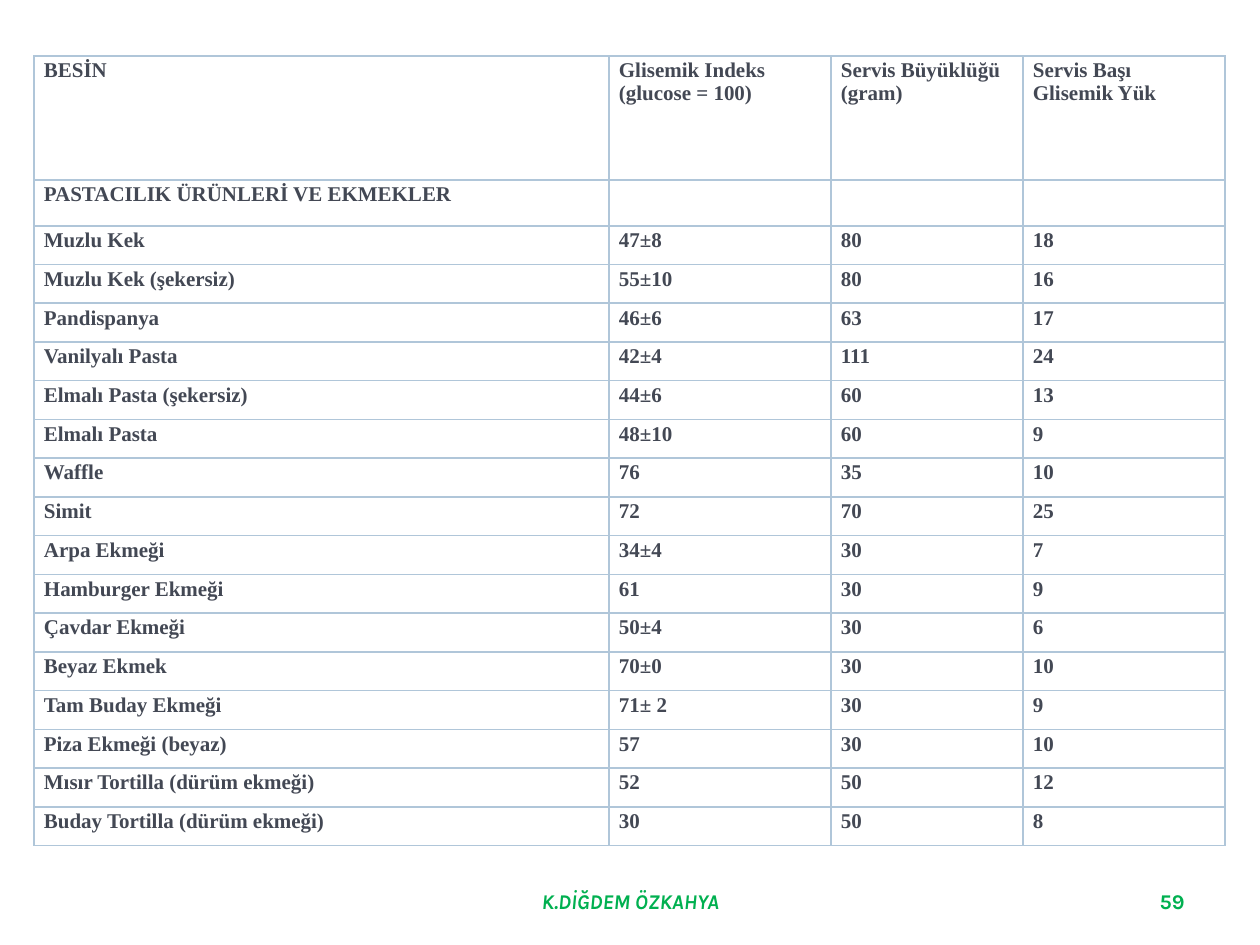
import lxml.etree
import pptx
import pptx.dml.color
import pptx.enum.text
import pptx.oxml.ns
import pptx.util

PX_PER_INCH = 126
TABLE_BOX = (34, 56, 1191, 783)
AUTHOR_BOX = (431, 876, 399, 50)
NUMBER_BOX = (903, 876, 294, 50)
COLUMN_WIDTHS = (575, 222, 192, 202)
HEADER_HEIGHT = 124
WHITE, BORDER, INK, GREEN = "FFFFFF", "B0C6D9", "434854", "00B050"
ALIGN = pptx.enum.text.PP_ALIGN
ANCHOR = pptx.enum.text.MSO_ANCHOR

FOODS = (
    ("BESİN", "Glisemik Indeks\n(glucose = 100)", "Servis Büyüklüğü (gram)", "Servis Başı Glisemik Yük"),
    ("PASTACILIK ÜRÜNLERİ VE EKMEKLER", "", "", ""),
    ("Muzlu Kek", "47±8", "80", "18"),
    ("Muzlu Kek (şekersiz)", "55±10", "80", "16"),
    ("Pandispanya", "46±6", "63", "17"),
    ("Vanilyalı Pasta", "42±4", "111", "24"),
    ("Elmalı Pasta (şekersiz)", "44±6", "60", "13"),
    ("Elmalı Pasta", "48±10", "60", "9"),
    ("Waffle", "76", "35", "10"),
    ("Simit", "72", "70", "25"),
    ("Arpa Ekmeği", "34±4", "30", "7"),
    ("Hamburger Ekmeği", "61", "30", "9"),
    ("Çavdar Ekmeği", "50±4", "30", "6"),
    ("Beyaz Ekmek", "70±0", "30", "10"),
    ("Tam Buday Ekmeği", "71± 2", "30", "9"),
    ("Piza Ekmeği (beyaz)", "57", "30", "10"),
    ("Mısır Tortilla (dürüm ekmeği)", "52", "50", "12"),
    ("Buday Tortilla (dürüm ekmeği)", "30", "50", "8"),
)


def px(length):
    """Turn pixels into EMU."""
    return pptx.util.Emu(round(length * 914400 / PX_PER_INCH))


def color(value):
    """Turn a hex string into a colour."""
    return pptx.dml.color.RGBColor.from_string(value)


def write_text(frame, text, *, font, ink, size=12, italic=False, align=ALIGN.LEFT, spacing=None):
    """Write one bold formatted paragraph into a text frame."""
    frame.word_wrap = True
    paragraph = frame.paragraphs[0]
    paragraph.text = text
    paragraph.alignment = align
    if spacing:
        paragraph.line_spacing = pptx.util.Pt(spacing)
    for run in paragraph.runs:
        run.font.name = font
        run.font.size = pptx.util.Pt(size)
        run.font.bold = True
        run.font.italic = italic
        run.font.color.rgb = color(ink)


def format_cell(cell):
    """Give a cell its margins, thin borders and white fill."""
    cell.margin_left = cell.margin_right = px(10)
    cell.margin_top = cell.margin_bottom = px(4)
    qualify = pptx.oxml.ns.qn
    properties = cell._tc.get_or_add_tcPr()
    for side in ("a:lnL", "a:lnR", "a:lnT", "a:lnB"):
        line = lxml.etree.SubElement(properties, qualify(side), w=str(pptx.util.Pt(1)))
        fill = lxml.etree.SubElement(line, qualify("a:solidFill"))
        lxml.etree.SubElement(fill, qualify("a:srgbClr"), val=BORDER)
    cell.fill.solid()
    cell.fill.fore_color.rgb = color(WHITE)


def add_food_table(slide, box):
    """Add the glycemic table with a tall header and equal body rows."""
    shape = slide.shapes.add_table(len(FOODS), len(COLUMN_WIDTHS), *map(px, box))
    table = shape.table
    table.first_row = table.horz_banding = False
    for column, width in zip(table.columns, COLUMN_WIDTHS):
        column.width = px(width)
    body_height = (box[3] - HEADER_HEIGHT) / (len(FOODS) - 1)
    for index, (row, values) in enumerate(zip(table.rows, FOODS)):
        row.height = px(body_height if index else HEADER_HEIGHT)
        for cell, value in zip(row.cells, values):
            format_cell(cell)
            write_text(cell.text_frame, value, font="Times New Roman", ink=INK, spacing=12.8)


def add_footer_text(slide, box, text, **text_format):
    """Add one vertically centred green footer text."""
    shape = slide.shapes.add_textbox(*map(px, box))
    shape.text_frame.vertical_anchor = ANCHOR.MIDDLE
    write_text(shape.text_frame, text, font="Karla", ink=GREEN, **text_format)


def main():
    """Build and save the presentation."""
    presentation = pptx.Presentation()
    presentation.slide_width = px(1260)
    presentation.slide_height = px(945)
    slide = presentation.slides.add_slide(presentation.slide_layouts[6])
    add_footer_text(slide, AUTHOR_BOX, "K.DİĞDEM ÖZKAHYA", italic=True, align=ALIGN.CENTER)
    add_footer_text(slide, NUMBER_BOX, "59", align=ALIGN.RIGHT)
    add_food_table(slide, TABLE_BOX)
    presentation.save("out.pptx")


if __name__ == "__main__":
    main()
